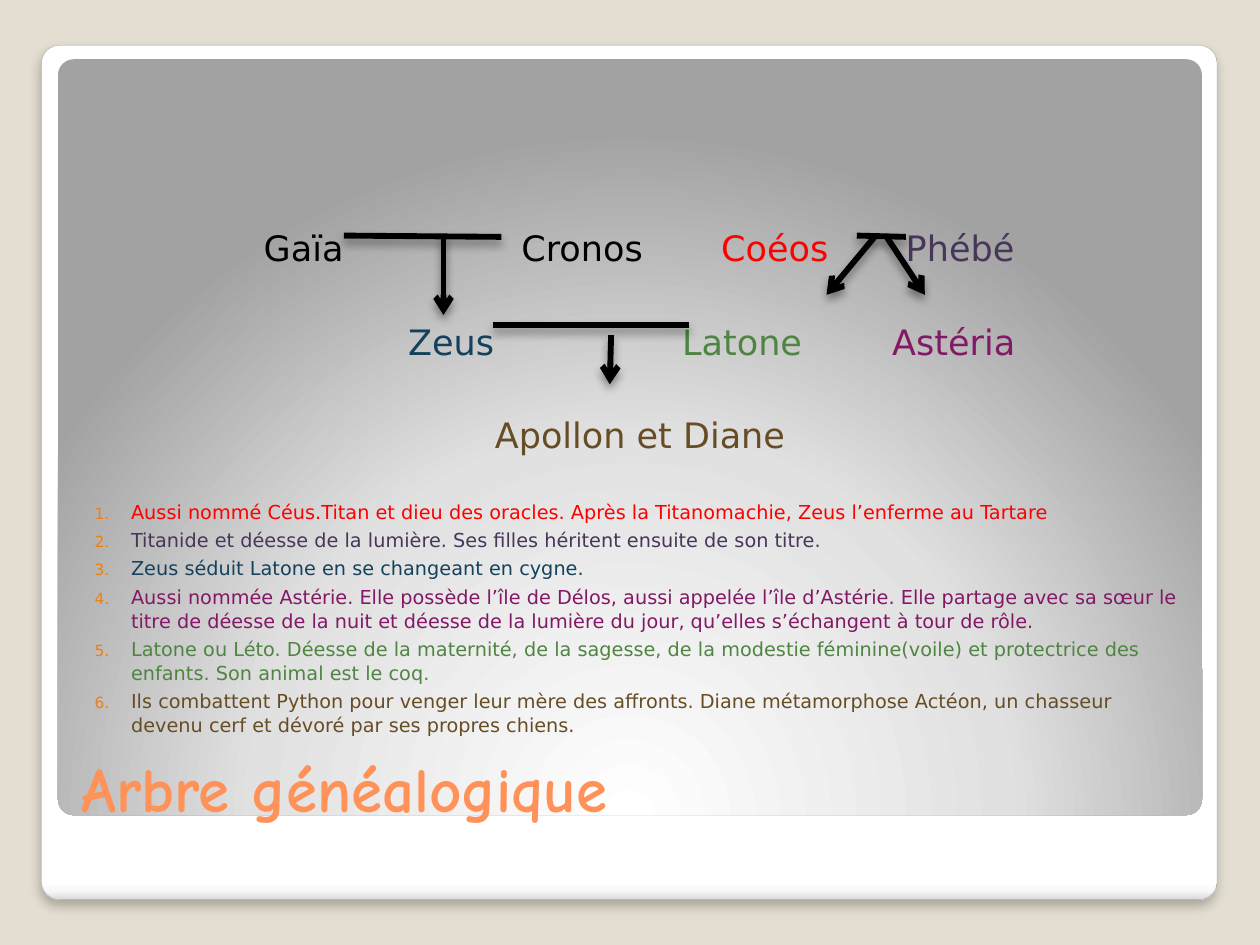
"""Build the "Arbre généalogique" slide: a family tree with numbered notes."""
from lxml import etree
from pptx import Presentation
from pptx.dml.color import RGBColor
from pptx.enum import shapes, text
from pptx.oxml import parse_xml
from pptx.oxml.ns import nsdecls, qn
from pptx.util import Inches, Pt

BACKGROUND = RGBColor(0xE3, 0xDE, 0xD1)
PANEL_LINE = RGBColor(0xA4, 0xA4, 0xA4)
BLACK = RGBColor(0, 0, 0)
RED = RGBColor(0xFF, 0, 0)
VIOLET = RGBColor(0x48, 0x36, 0x5A)
BLUE = RGBColor(0x14, 0x42, 0x5D)
GREEN = RGBColor(0x4E, 0x85, 0x42)
PURPLE = RGBColor(0x82, 0x18, 0x66)
BROWN = RGBColor(0x67, 0x4D, 0x26)
TITLE_COLOR = RGBColor(0xFF, 0x92, 0x58)
NUMBER_COLOR = RGBColor(0xF0, 0x7F, 0x09)
BODY_FONT, TITLE_FONT = "DejaVu Sans", "Comic Neue"

TITLE = "Arbre généalogique"
GENERATIONS = [
    [("Gaïa", 2.41, BLACK), ("Cronos", 4.62, BLACK), ("Coéos", 6.15, RED), ("Phébé", 7.62, VIOLET)],
    [("Zeus", 3.58, BLUE), ("Latone", 5.89, GREEN), ("Astéria", 7.57, PURPLE)],
    [("Apollon et Diane", 5.08, BROWN)],
]
NOTES = [
    ("Aussi nommé Céus.Titan et dieu des oracles. Après la Titanomachie, Zeus l’enferme au Tartare", RED),
    ("Titanide et déesse de la lumière. Ses filles héritent ensuite de son titre.", VIOLET),
    ("Zeus séduit Latone en se changeant en cygne.", BLUE),
    ("Aussi nommée Astérie. Elle possède l’île de Délos, aussi appelée l’île d’Astérie. Elle partage "
     "avec sa sœur le titre de déesse de la nuit et déesse de la lumière du jour, qu’elles "
     "s’échangent à tour de rôle.", PURPLE),
    ("Latone ou Léto. Déesse de la maternité, de la sagesse, de la modestie féminine(voile) et "
     "protectrice des enfants. Son animal est le coq.", GREEN),
    ("Ils combattent Python pour venger leur mère des affronts. Diane métamorphose Actéon, un "
     "chasseur devenu cerf et dévoré par ses propres chiens.", BROWN),
]
UNIONS = [(2.73, 1.87, 3.98, 1.88), (6.8, 1.87, 7.19, 1.88), (3.91, 2.58, 5.47, 2.58)]
DESCENTS = [(3.52, 1.87, 3.52, 2.5), (6.95, 1.87, 6.56, 2.34),
            (4.85, 2.66, 4.84, 3.05), (7.03, 1.87, 7.34, 2.34)]
ROW_TOP, ROW_PITCH, ROW_HEIGHT, CHARACTER_WIDTH = 1.8, 0.74, 0.33, 0.18


def add_shadow(shape, opacity, blur, distance):
    shape._element.spPr.append(parse_xml(
        f'<a:effectLst {nsdecls("a")}><a:outerShdw blurRad="{Pt(blur)}" dist="{Pt(distance)}" '
        f'dir="5400000" algn="t" rotWithShape="0"><a:srgbClr val="000000">'
        f'<a:alpha val="{opacity * 1000}"/></a:srgbClr></a:outerShdw></a:effectLst>'))


def add_panel(slide, box, stops, direction):
    panel = slide.shapes.add_shape(shapes.MSO_SHAPE.ROUNDED_RECTANGLE, *map(Inches, box))
    panel.adjustments[0] = 0.021
    panel.fill.background()
    colors = "".join(f'<a:gs pos="{position * 1000}"><a:srgbClr val="{color}"/></a:gs>'
                     for position, color in stops)
    properties = panel._element.spPr
    properties.replace(properties.find(qn("a:noFill")), parse_xml(
        f'<a:gradFill {nsdecls("a")} rotWithShape="1"><a:gsLst>{colors}</a:gsLst>{direction}</a:gradFill>'))
    return panel


def add_text_box(slide, box, insets=(0, 0, 0, 0), wrap=True, anchor=text.MSO_ANCHOR.TOP):
    frame = slide.shapes.add_textbox(*map(Inches, box)).text_frame
    frame.word_wrap, frame.vertical_anchor = wrap, anchor
    for side, inset in zip(("left", "top", "right", "bottom"), insets):
        setattr(frame, f"margin_{side}", Inches(inset))
    return frame


def write(paragraph, words, color, **formats):
    run = paragraph.add_run()
    run.text = words
    run.font.color.rgb = color
    for name, value in formats.items():
        setattr(run.font, name, value)


def number(paragraph):
    properties = paragraph._p.get_or_add_pPr()
    properties.set("marL", str(Inches(0.29)))
    properties.set("indent", str(-Inches(0.29)))
    color = etree.SubElement(properties, qn("a:buClr"))
    etree.SubElement(color, qn("a:srgbClr"), val=str(NUMBER_COLOR))
    etree.SubElement(properties, qn("a:buSzPct"), val="80000")
    etree.SubElement(properties, qn("a:buFont"), typeface=BODY_FONT)
    etree.SubElement(properties, qn("a:buAutoNum"), type="arabicPeriod")


def add_link(slide, ends, arrow):
    link = slide.shapes.add_connector(shapes.MSO_CONNECTOR.STRAIGHT, *map(Inches, ends))
    link.line.color.rgb = BLACK
    link.line.width = Pt(3.35)
    if arrow:
        etree.SubElement(link.line._get_or_add_ln(), qn("a:tailEnd"), type="arrow")
    add_shadow(link, 40, 5.2, 3)


def main():
    presentation = Presentation()
    presentation.slide_width, presentation.slide_height = Inches(10), Inches(7.5)
    slide = presentation.slides.add_slide(presentation.slide_layouts[6])
    slide.background.fill.solid()
    slide.background.fill.fore_color.rgb = BACKGROUND

    card = add_panel(slide, (0.33, 0.36, 9.33, 6.78),
                     [(0, "FFFFFF"), (98, "FFFFFF"), (99, "F7F7F7"), (100, "DADADA")],
                     '<a:lin ang="5400000" scaled="0"/>')
    card.line.color.rgb = PANEL_LINE
    card.line.width = Pt(0.16)
    add_shadow(card, 25, 6, 4)
    stage = add_panel(slide, (0.46, 0.47, 9.08, 6),
                      [(0, "FFFFFF"), (55, "E1E1E1"), (100, "A2A2A2")],
                      '<a:path path="circle"><a:fillToRect l="50000" t="175000" r="50000" b="-75000"/></a:path>')
    stage.line.fill.background()
    stage.shadow.inherit = False

    title = add_text_box(slide, (0.55, 5.45, 8.95, 1.15), (0.1, 0.05, 0.1, 0.05),
                         anchor=text.MSO_ANCHOR.BOTTOM)
    write(title.paragraphs[0], TITLE, TITLE_COLOR, name=TITLE_FONT, size=Pt(36), bold=True)

    for row, people in enumerate(GENERATIONS):
        for name, center, color in people:
            width = CHARACTER_WIDTH * len(name)
            box = (center - width / 2, ROW_TOP + row * ROW_PITCH, width, ROW_HEIGHT)
            paragraph = add_text_box(slide, box, wrap=False).paragraphs[0]
            paragraph.alignment = text.PP_ALIGN.CENTER
            write(paragraph, name, color, name=BODY_FONT, size=Pt(20))

    notes = add_text_box(slide, (0.55, 3.96, 8.95, 1.9), (0.2, 0, 0.1, 0))
    for index, (note, color) in enumerate(NOTES):
        paragraph = notes.add_paragraph() if index else notes.paragraphs[0]
        paragraph.space_before = Pt(2.5)
        paragraph.line_spacing = 1.04
        number(paragraph)
        write(paragraph, note, color, name=BODY_FONT, size=Pt(11))

    for links, arrow in ((UNIONS, False), (DESCENTS, True)):
        for ends in links:
            add_link(slide, ends, arrow)

    presentation.save("out.pptx")


if __name__ == "__main__":
    main()
